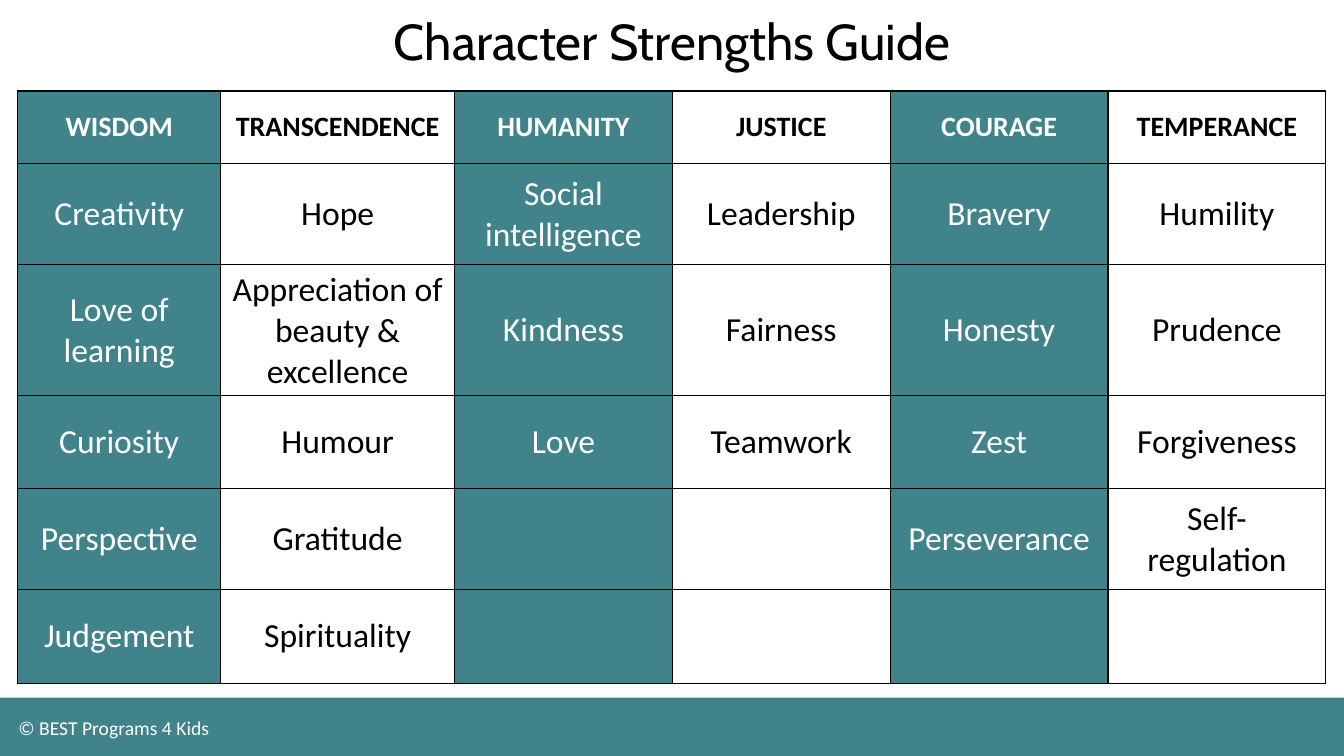
from lxml.etree import SubElement
from pptx import Presentation
from pptx.dml.color import RGBColor
from pptx.enum.shapes import MSO_SHAPE
from pptx.enum.text import MSO_ANCHOR, PP_ALIGN
from pptx.oxml.ns import qn
from pptx.util import Pt

TEAL = RGBColor(0x40, 0x83, 0x8B)
WHITE = RGBColor(0xFF, 0xFF, 0xFF)
BLACK = RGBColor(0, 0, 0)

STRENGTHS = {
    "WISDOM": ["Creativity", "Love of learning", "Curiosity", "Perspective", "Judgement"],
    "TRANSCENDENCE": ["Hope", "Appreciation of beauty & excellence", "Humour",
                      "Gratitude", "Spirituality"],
    "HUMANITY": ["Social intelligence", "Kindness", "Love"],
    "JUSTICE": ["Leadership", "Fairness", "Teamwork"],
    "COURAGE": ["Bravery", "Honesty", "Zest", "Perseverance"],
    "TEMPERANCE": ["Humility", "Prudence", "Forgiveness", "Self-regulation"],
}
COLUMN_WIDTHS = [145, 167] + [155.6] * 4
ROW_HEIGHTS = [52, 72, 93.5, 66.5, 72, 67]


def format_text(text_frame, font_name, size, color, bold=False, align=PP_ALIGN.LEFT):
    """Apply one font and alignment to the first paragraph of a text frame."""
    paragraph = text_frame.paragraphs[0]
    paragraph.alignment = align
    for run in paragraph.runs:
        run.font.name = font_name
        run.font.size = Pt(size)
        run.font.bold = bold
        run.font.color.rgb = color


def add_text(slide, box, text, *style, **options):
    """Add a one-line text box at left, top, width, height."""
    text_frame = slide.shapes.add_textbox(*map(Pt, box)).text_frame
    text_frame.word_wrap = True
    text_frame.text = text
    format_text(text_frame, *style, **options)


def add_band(slide, box, color):
    """Add a plain filled rectangle."""
    band = slide.shapes.add_shape(MSO_SHAPE.RECTANGLE, *map(Pt, box))
    band.shadow.inherit = False
    band.fill.solid()
    band.fill.fore_color.rgb = color
    band.line.fill.background()


def set_borders(cell, width, color):
    """Draw a solid line on all four sides of a table cell."""
    properties = cell._tc.get_or_add_tcPr()
    for side in ("lnL", "lnR", "lnT", "lnB"):
        line = SubElement(properties, qn(f"a:{side}"), w=str(Pt(width)))
        fill = SubElement(line, qn("a:solidFill"))
        SubElement(fill, qn("a:srgbClr"), val=str(color))


def fill_cell(cell, text, is_header, is_teal):
    """Write and style one cell of the strengths table."""
    set_borders(cell, 1, BLACK)
    cell.fill.solid()
    cell.fill.fore_color.rgb = TEAL if is_teal else WHITE
    cell.vertical_anchor = MSO_ANCHOR.MIDDLE
    cell.text_frame.text = text
    format_text(cell.text_frame, "Calibri", 20 if is_header else 24,
                WHITE if is_teal else BLACK, bold=is_header, align=PP_ALIGN.CENTER)


def add_strengths_table(slide, left, top):
    """Add the table with one virtue per column, alternating teal and white."""
    table = slide.shapes.add_table(
        len(ROW_HEIGHTS), len(COLUMN_WIDTHS), Pt(left), Pt(top),
        Pt(sum(COLUMN_WIDTHS)), Pt(sum(ROW_HEIGHTS))).table
    table.first_row = table.horz_banding = False
    for row, height in zip(table.rows, ROW_HEIGHTS):
        row.height = Pt(height)
    for column, width in zip(table.columns, COLUMN_WIDTHS):
        column.width = Pt(width)
    for column_index, (virtue, strengths) in enumerate(STRENGTHS.items()):
        texts = [virtue] + strengths
        texts += [""] * (len(ROW_HEIGHTS) - len(texts))
        for row_index, text in enumerate(texts):
            fill_cell(table.cell(row_index, column_index), text,
                      row_index == 0, column_index % 2 == 0)


def main():
    """Build and save the slide."""
    presentation = Presentation()
    presentation.slide_width, presentation.slide_height = Pt(960), Pt(540)
    slide = presentation.slides.add_slide(presentation.slide_layouts[6])
    add_band(slide, (0, 498.3, 960, 41.7), TEAL)
    add_text(slide, (6, 507.5, 194.5, 24.5), "© BEST Programs 4 Kids",
             "Calibri", 14, WHITE)
    add_strengths_table(slide, 12.7, 65)
    add_text(slide, (12.7, 3.6, 934.6, 51), "Character Strengths Guide",
             "Cabin", 36, BLACK, align=PP_ALIGN.CENTER)
    presentation.save("out.pptx")


if __name__ == "__main__":
    main()
